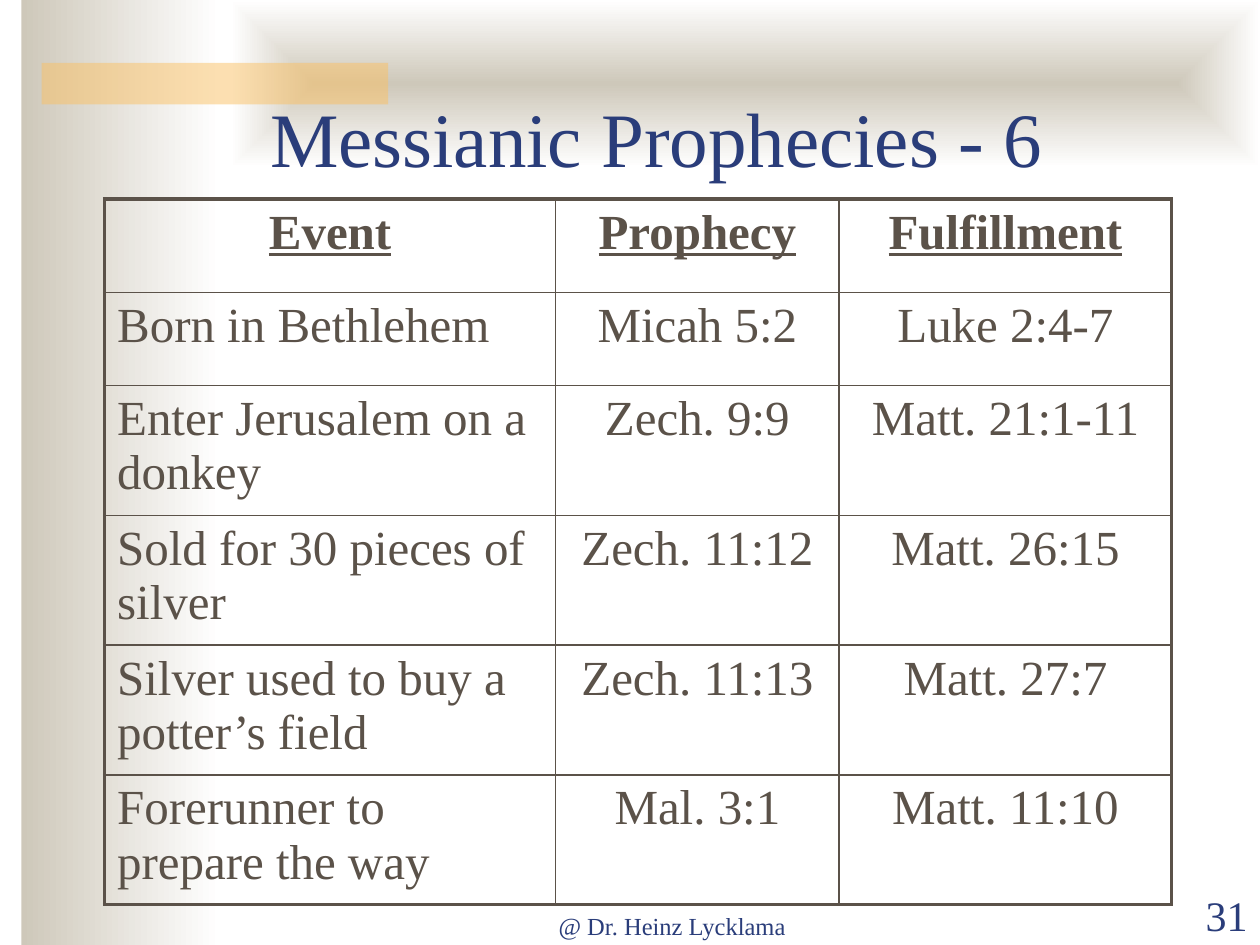
from typing import NamedTuple

from lxml import etree
from pptx import Presentation
from pptx.dml.color import RGBColor
from pptx.enum.shapes import MSO_SHAPE
from pptx.enum.text import MSO_ANCHOR, MSO_AUTO_SIZE, PP_ALIGN
from pptx.oxml.ns import qn
from pptx.util import Emu, Pt

RECTANGLE = MSO_SHAPE.RECTANGLE
LEFT, CENTER, RIGHT = PP_ALIGN.LEFT, PP_ALIGN.CENTER, PP_ALIGN.RIGHT
BOTTOM = MSO_ANCHOR.BOTTOM
NO_AUTOFIT = MSO_AUTO_SIZE.NONE

EMU_PER_PX = 9144  # 100 px to the inch
FONT = "Times New Roman"
NAVY, BROWN, BEIGE, WHITE, AMBER = "2A3D7A", "5B5249", "CEC8BA", "FFFFFF", "FAC164"
OUTER_LINE, INNER_LINE = 2.25, 1


class Box(NamedTuple):
    left: int
    top: int
    width: int
    height: int


class Prophecy(NamedTuple):
    event: str
    prophecy: str
    fulfillment: str


SIDE_BAND = Box(17, 0, 158, 750)
TOP_BAND = Box(183, 0, 817, 133)
ACCENT_BAR = Box(33, 50, 275, 33)
TITLE = Box(175, 83, 692, 67)
FOOTER = Box(375, 701, 317, 50)
SLIDE_NUMBER = Box(900, 701, 100, 50)
TABLE = Box(83, 158, 847, 560)

COLUMN_WIDTHS = (358, 225, 264)
ROW_HEIGHTS = (74, 74, 103, 103, 103, 103)
ROWS = (
    Prophecy("Event", "Prophecy", "Fulfillment"),
    Prophecy("Born in Bethlehem", "Micah 5:2", "Luke 2:4-7"),
    Prophecy("Enter Jerusalem on a donkey", "Zech. 9:9", "Matt. 21:1-11"),
    Prophecy("Sold for 30 pieces of silver", "Zech. 11:12", "Matt. 26:15"),
    Prophecy("Silver used to buy a potter’s field", "Zech. 11:13", "Matt. 27:7"),
    Prophecy("Forerunner to prepare the way", "Mal. 3:1", "Matt. 11:10"),
)


def px(length: int) -> Emu:
    return Emu(length * EMU_PER_PX)


def place(box: Box) -> list[Emu]:
    return [px(length) for length in box]


def color(value: str) -> RGBColor:
    return RGBColor.from_string(value)


def write(text_frame, text: str, *, size: int, ink: str = NAVY, align=CENTER,
          bold: bool = False, underline: bool = False) -> None:
    paragraph = text_frame.paragraphs[0]
    paragraph.alignment = align
    run = paragraph.add_run()
    run.text = text
    font = run.font
    font.name, font.size, font.bold, font.underline = FONT, Pt(size), bold, underline
    font.color.rgb = color(ink)


def add_rectangle(slide, box: Box):
    shape = slide.shapes.add_shape(RECTANGLE, *place(box))
    shape.shadow.inherit = False
    shape.line.fill.background()
    return shape


def add_gradient_band(slide, box: Box, from_center: bool = False) -> None:
    """Fade from beige to white, rightward or outward from the center."""
    shape = add_rectangle(slide, box)
    shape.fill.gradient()
    shape.fill.gradient_angle = 0
    for stop, (position, value) in zip(shape.fill.gradient_stops, ((0, BEIGE), (1, WHITE))):
        stop.position = position
        stop.color.rgb = color(value)
    if from_center:
        linear = shape.element.spPr.find(".//" + qn("a:lin"))
        gradient = linear.getparent()
        outward = etree.Element(qn("a:path"), {"path": "shape"})
        sides = {side: "50000" for side in "ltrb"}
        etree.SubElement(outward, qn("a:fillToRect"), sides)
        gradient.replace(linear, outward)


def add_accent_bar(slide, box: Box) -> None:
    shape = add_rectangle(slide, box)
    shape.fill.solid()
    shape.fill.fore_color.rgb = color(AMBER)
    amber = shape.element.spPr.find(qn("a:solidFill")).find(qn("a:srgbClr"))
    etree.SubElement(amber, qn("a:alpha"), val="50000")


def add_text(slide, box: Box, text: str, *, size: int, align=CENTER) -> None:
    text_frame = slide.shapes.add_textbox(*place(box)).text_frame
    text_frame.word_wrap = True
    text_frame.vertical_anchor = BOTTOM
    write(text_frame, text, size=size, align=align)


def set_borders(cell, outer_sides: dict[str, bool]) -> None:
    """Draw the four borders, thicker on the outer sides of the table."""
    properties = cell._tc.get_or_add_tcPr()
    for side, is_outer in outer_sides.items():
        width = Pt(OUTER_LINE if is_outer else INNER_LINE)
        line = etree.SubElement(properties, qn(f"a:ln{side}"), w=str(width))
        fill = etree.SubElement(line, qn("a:solidFill"))
        etree.SubElement(fill, qn("a:srgbClr"), val=BROWN)


def add_prophecy_table(slide) -> None:
    row_count, column_count = len(ROWS), len(COLUMN_WIDTHS)
    table = slide.shapes.add_table(row_count, column_count, *place(TABLE)).table
    table.first_row = table.horz_banding = False
    for column, width in zip(table.columns, COLUMN_WIDTHS):
        column.width = px(width)
    for row, height in zip(table.rows, ROW_HEIGHTS):
        row.height = px(height)
    for i, texts in enumerate(ROWS):
        is_header = i == 0
        for j, text in enumerate(texts):
            cell = table.cell(i, j)
            set_borders(cell, {"L": j == 0, "R": j == column_count - 1,
                               "T": is_header, "B": i == row_count - 1})
            cell.fill.background()
            write(cell.text_frame, text, size=28, ink=BROWN,
                  align=CENTER if is_header or j else LEFT,
                  bold=is_header, underline=is_header)


def set_title(slide, text: str) -> None:
    title = slide.shapes.title
    title.left, title.top, title.width, title.height = place(TITLE)
    title.text_frame.auto_size = NO_AUTOFIT
    title.text_frame.vertical_anchor = BOTTOM
    write(title.text_frame, text, size=44)
    # Bring the title in front of the bands
    title.element.getparent().append(title.element)


def main() -> None:
    presentation = Presentation()
    presentation.slide_width, presentation.slide_height = px(1000), px(750)
    slide = presentation.slides.add_slide(presentation.slide_layouts[5])

    # Background decoration
    add_gradient_band(slide, SIDE_BAND)
    add_gradient_band(slide, TOP_BAND, from_center=True)
    add_accent_bar(slide, ACCENT_BAR)

    # Footer, title and table
    add_text(slide, FOOTER, "@ Dr. Heinz Lycklama", size=14)
    add_text(slide, SLIDE_NUMBER, "31", size=24, align=RIGHT)
    set_title(slide, "Messianic Prophecies - 6")
    add_prophecy_table(slide)

    presentation.save("out.pptx")


if __name__ == "__main__":
    main()
